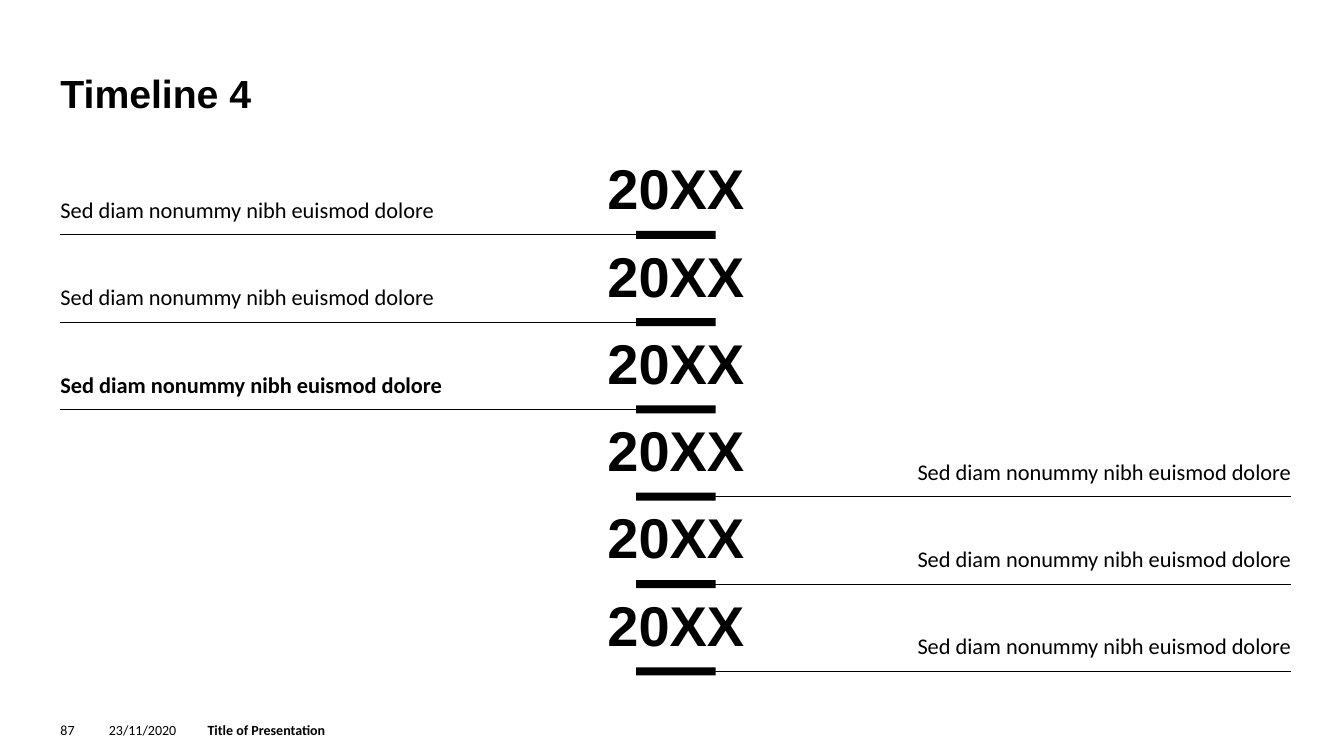
import dataclasses
import pptx
import pptx.dml.color
import pptx.enum.shapes
import pptx.enum.text
import pptx.oxml.ns
import pptx.presentation
import pptx.shapes.base
import pptx.slide
import pptx.util
from lxml import etree

Pt = pptx.util.Pt
ALIGN = pptx.enum.text.PP_ALIGN
ANCHOR = pptx.enum.text.MSO_ANCHOR
BLACK = pptx.dml.color.RGBColor(0x00, 0x00, 0x00)
WHITE = pptx.dml.color.RGBColor(0xFF, 0xFF, 0xFF)
HEADING_FONT, BODY_FONT = "Arial", "Calibri"

LEFT, RIGHT = 43.2, 922.3
FIRST_LINE, STEP = 167.76, 62.36
BAR_LEFT, BAR_WIDTH, BAR_HEIGHT = 454.3, 56.9, 5.76
LABEL_WIDTH, LABEL_HEIGHT = 311.8, 34
LINE_LENGTH = 419.8
FOOTER_TOP, FOOTER_HEIGHT = 515.5, 11.5


@dataclasses.dataclass(frozen=True)
class Milestone:
    year: str
    label: str
    on_left: bool
    bold: bool = False


@dataclasses.dataclass(frozen=True)
class FooterItem:
    text: str
    left: float
    width: float
    bold: bool = False


LABEL = "Sed diam nonummy nibh euismod dolore"
MILESTONES = [
    Milestone("20XX", LABEL, on_left=True),
    Milestone("20XX", LABEL, on_left=True),
    Milestone("20XX", LABEL, on_left=True, bold=True),
    Milestone("20XX", LABEL, on_left=False),
    Milestone("20XX", LABEL, on_left=False),
    Milestone("20XX", LABEL, on_left=False),
]
FOOTER = [
    FooterItem("87", LEFT, 22.3),
    FooterItem("23/11/2020", 77.8, 62.6),
    FooterItem("Title of Presentation", 148.3, 607, bold=True),
]


def set_text(sp: pptx.shapes.base.BaseShape, text: str, size: float, font: str,
             bold: bool, anchor: ANCHOR, align: ALIGN = ALIGN.LEFT,
             bottom: float = 0, wrap: bool = True, spacing: float = 1.0) -> None:
    """Write one formatted paragraph; bottom is the lower inset."""
    tf = sp.text_frame
    frame_format = {
        "margin_left": 0, "margin_top": 0, "margin_right": 0,
        "margin_bottom": Pt(bottom), "word_wrap": wrap, "vertical_anchor": anchor,
        "auto_size": pptx.enum.text.MSO_AUTO_SIZE.NONE,
    }
    for name, value in frame_format.items():
        setattr(tf, name, value)
    p = tf.paragraphs[0]
    p.alignment, p.line_spacing = align, spacing
    r = p.add_run()
    r.text = text
    for name, value in {"size": Pt(size), "name": font, "bold": bold}.items():
        setattr(r.font, name, value)
    r.font.color.rgb = BLACK


def add_title(s: pptx.slide.Slide, text: str) -> None:
    sp = s.shapes.title
    place = {"left": LEFT, "top": 49, "width": RIGHT - LEFT, "height": 33.8}
    for name, value in place.items():
        setattr(sp, name, Pt(value))
    set_text(sp, text, 28, HEADING_FONT, True, ANCHOR.BOTTOM)


def add_line(s: pptx.slide.Slide, left: float, y: float) -> None:
    line = s.shapes.add_connector(
        pptx.enum.shapes.MSO_CONNECTOR.STRAIGHT,
        Pt(left), Pt(y), Pt(left + LINE_LENGTH), Pt(y))
    line.line.color.rgb = BLACK
    line.line.width = Pt(0.75)
    etree.SubElement(line._element.spPr, pptx.oxml.ns.qn("a:effectLst"))


def add_label(s: pptx.slide.Slide, item: Milestone, y: float) -> None:
    left = LEFT if item.on_left else RIGHT - LABEL_WIDTH
    sp = s.shapes.add_textbox(
        Pt(left), Pt(y - LABEL_HEIGHT), Pt(LABEL_WIDTH), Pt(LABEL_HEIGHT))
    set_text(sp, item.label, 16, BODY_FONT, item.bold, ANCHOR.BOTTOM,
             ALIGN.LEFT if item.on_left else ALIGN.RIGHT, bottom=8.5, spacing=1.2)


def add_year_bar(s: pptx.slide.Slide, year: str, y: float) -> None:
    sp = s.shapes.add_shape(
        pptx.enum.shapes.MSO_SHAPE.RECTANGLE,
        Pt(BAR_LEFT), Pt(y - BAR_HEIGHT / 2), Pt(BAR_WIDTH), Pt(BAR_HEIGHT))
    sp.shadow.inherit = False
    sp.fill.solid()
    sp.fill.fore_color.rgb = BLACK
    sp.line.fill.background()
    set_text(sp, year, 40, HEADING_FONT, True, ANCHOR.BOTTOM, ALIGN.CENTER,
             bottom=20, wrap=False)


def add_footer_item(s: pptx.slide.Slide, item: FooterItem) -> None:
    sp = s.shapes.add_textbox(
        Pt(item.left), Pt(FOOTER_TOP), Pt(item.width), Pt(FOOTER_HEIGHT))
    set_text(sp, item.text, 10, BODY_FONT, item.bold, ANCHOR.MIDDLE)


def build() -> pptx.presentation.Presentation:
    prs = pptx.Presentation()
    prs.slide_width, prs.slide_height = Pt(960), Pt(540)
    s = prs.slides.add_slide(prs.slide_layouts.get_by_name("Title Only"))
    s.background.fill.solid()
    s.background.fill.fore_color.rgb = WHITE
    add_title(s, "Timeline 4")
    for item in FOOTER:
        add_footer_item(s, item)
    rows = [(FIRST_LINE + i * STEP, item) for i, item in enumerate(MILESTONES)]
    for y, item in rows:
        add_line(s, LEFT if item.on_left else RIGHT - LINE_LENGTH, y)
        add_label(s, item, y)
    for y, item in rows:
        add_year_bar(s, item.year, y)
    return prs


if __name__ == "__main__":
    build().save("out.pptx")
